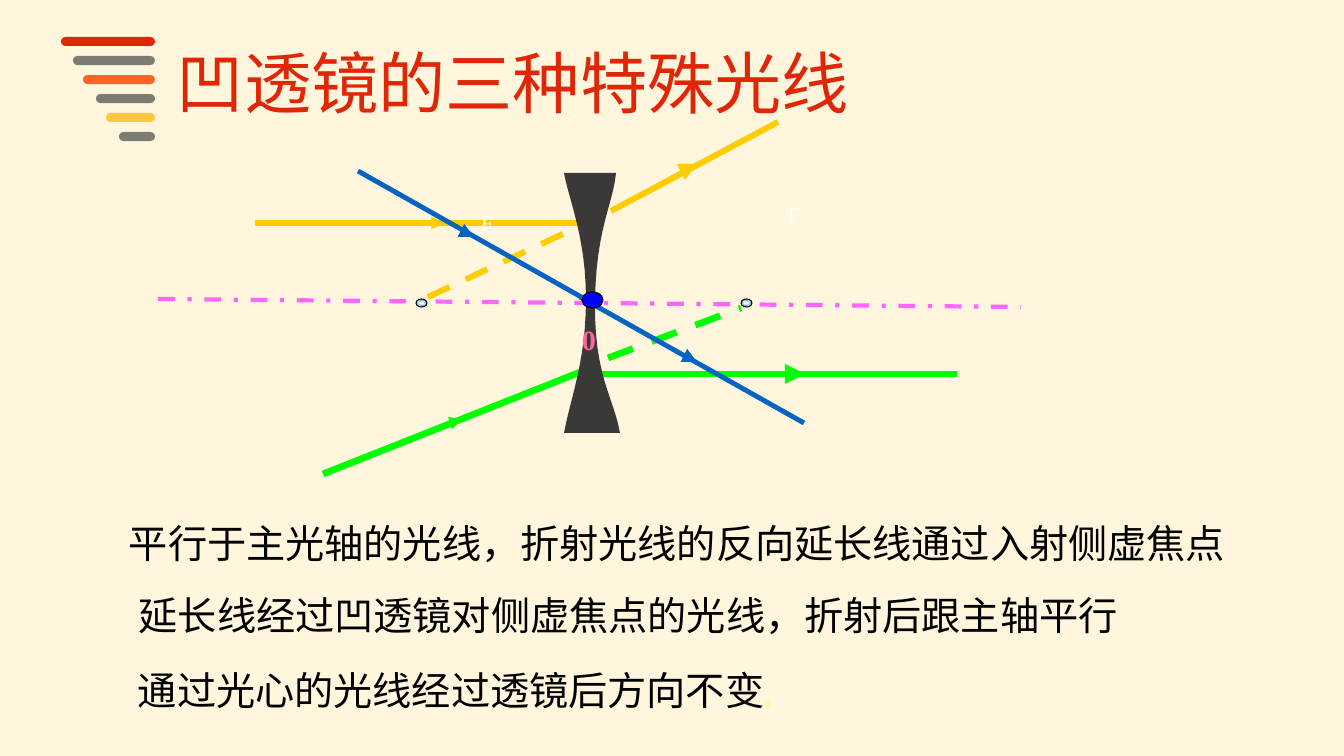
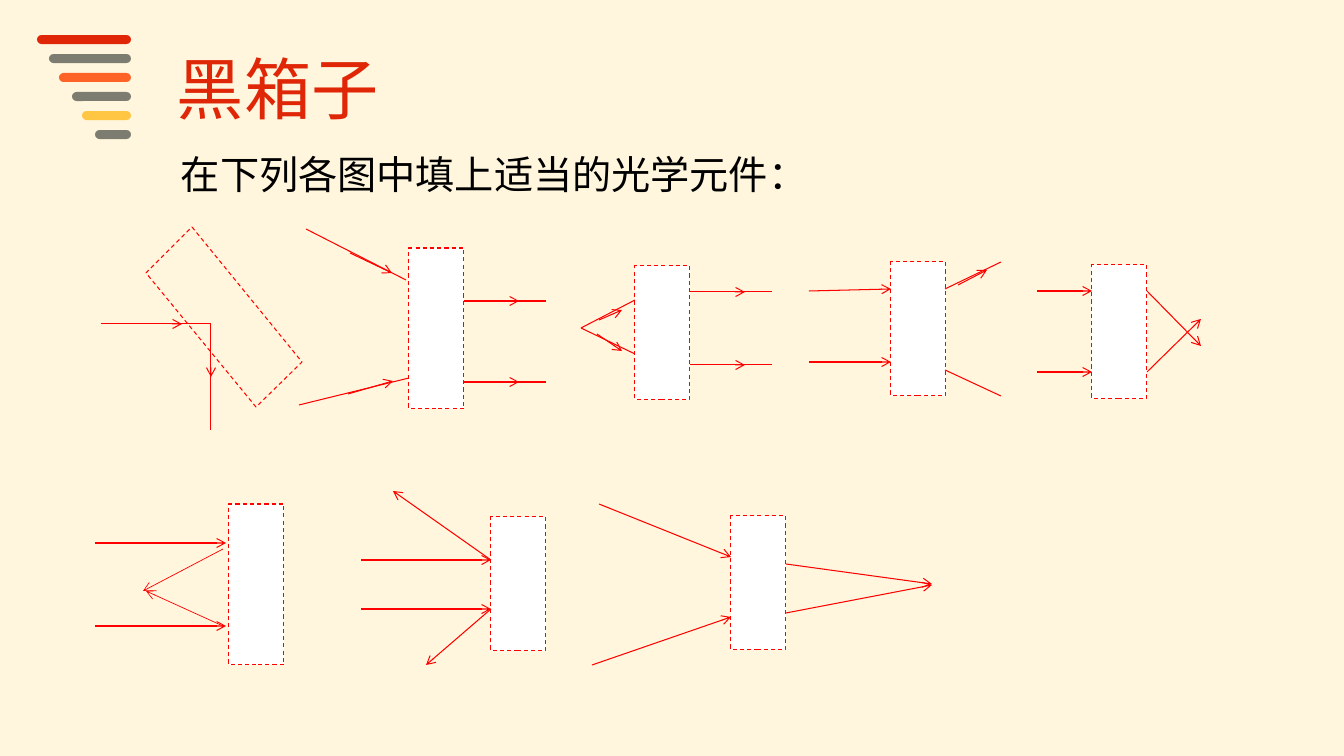
"""Two slides on lenses: the special rays of a concave lens, and black-box exercises."""
from lxml import etree
from pptx import Presentation
from pptx import util as u
from pptx.dml.color import RGBColor
from pptx.enum import dml, shapes
from pptx.oxml.ns import qn

PX = 9071
CJK, SERIF = "Noto Sans CJK SC", "Times New Roman"
CREAM, BLACK, WHITE, PALE = "FFF6DD", "000000", "FFFFFF", "FCFDFE"
CRIMSON, GREY, ORANGE, AMBER = "DF2708", "7C7C70", "FD6326", "FEC642"
RED, YELLOW, GREEN, BLUE = "FF0000", "FFCC00", "00FF00", "0563C1"
DASH, DASH_DOT = dml.MSO_LINE.DASH, dml.MSO_LINE.DASH_DOT
SHAPE = shapes.MSO_SHAPE
rgb = RGBColor.from_string


def add_line(s, ends, color, width, dash=None, head=None):
    """Draw a straight line, dashed or with an arrowhead at its end if asked."""
    cx = s.shapes.add_connector(shapes.MSO_CONNECTOR.STRAIGHT, *[v * PX for v in ends])
    cx.line.color.rgb = rgb(color)
    cx.line.width = u.Pt(width)
    if dash:
        cx.line.dash_style = dash
    if head:
        etree.SubElement(cx.line._get_or_add_ln(), qn("a:tailEnd"), type=head)
    etree.SubElement(cx._element.spPr, qn("a:effectLst"))


def add_text(s, box, runs):
    """Add a text box of one paragraph; runs are (text, size, font, colour, bold)."""
    tf = s.shapes.add_textbox(*[v * PX for v in box]).text_frame
    tf.word_wrap = True
    p = tf.paragraphs[0]
    for words, size, font, color, bold in runs:
        r = p.add_run()
        r.text = words
        r.font.size = u.Pt(size)
        r.font.bold = bold
        r.font.color.rgb = rgb(color)
        r.font.name = font
        etree.SubElement(r._r.get_or_add_rPr(), qn("a:ea"), typeface=CJK)


prs = Presentation()
prs.slide_width, prs.slide_height = 1344 * PX, 756 * PX
bg = prs.slide_master.background.fill
bg.solid()
bg.fore_color.rgb = rgb(CREAM)

bars = [(94, CRIMSON), (82, GREY), (72, ORANGE), (59, GREY), (49, AMBER), (36, GREY)]
slides = []
for title, box, right, top in [
    ("凹透镜的三种特殊光线", (167, 36, 723, 92), 155, 37),
    ("黑箱子", (167, 42, 298, 92), 131, 35),
]:
    s = prs.slides.add_slide(prs.slide_layouts[6])
    slides.append(s)
    for i, (w, color) in enumerate(bars):
        sp = s.shapes.add_shape(SHAPE.ROUNDED_RECTANGLE, (right - w) * PX,
                                (top + 19 * i) * PX, w * PX, 9 * PX)
        sp.adjustments[0] = 0.5
        sp.shadow.inherit = False
        sp.fill.solid()
        sp.fill.fore_color.rgb = rgb(color)
        sp.line.fill.background()
    add_text(s, box, [(title, 48, CJK, CRIMSON, False)])
lens_slide, box_slide = slides

s = lens_slide
for ends, color, width, dash, head in [
    ((255, 223, 583, 223), YELLOW, 4.25, None, None),
    ((394, 223, 444, 223), YELLOW, 3, None, "triangle"),
    ((323, 474, 593, 367), GREEN, 4.75, None, None),
    ((453, 422, 462, 419), GREEN, 3, None, "triangle"),
    ((608, 358, 741, 308), GREEN, 4.75, DASH, None),
    ((599, 374, 957, 374), GREEN, 4.75, None, None),
    ((751, 374, 805, 374), GREEN, 4.75, None, "triangle"),
    ((611, 211, 778, 122), YELLOW, 4.25, None, None),
    ((691, 167, 697, 164), YELLOW, 4.25, None, "triangle"),
    ((428, 297, 580, 226), YELLOW, 4.25, DASH, None),
    ((580, 297, 804, 423), BLUE, 3.5, None, None),
    ((687, 357, 697, 362), BLUE, 3.5, None, "triangle"),
    ((358, 171, 583, 298), BLUE, 3.5, None, None),
    ((466, 233, 474, 237), BLUE, 3.5, None, "triangle"),
]:
    add_line(s, ends, color, width, dash, head)

corner = (564, 173)
curves = [
    ((564, 173), (590, 173), (616, 173)),
    ((613, 205), (596, 228), (595, 302)),
    ((594, 376), (614, 398), (620, 433)),
    ((592, 433), (564, 433), (564, 433)),
    ((571, 396), (586, 361), (586, 299)),
    ((586, 238), (569, 200), (564, 173)),
]
points, start = [], corner
for a, b, end in curves:
    for t in [k / 12 for k in range(1, 13)]:
        weights = ((1 - t) ** 3, 3 * t * (1 - t) ** 2, 3 * t * t * (1 - t), t ** 3)
        points.append([round(PX * sum(w * q[axis] for w, q in zip(weights, (start, a, b, end))))
                       for axis in (0, 1)])
    start = end
fb = s.shapes.build_freeform(corner[0] * PX, corner[1] * PX, scale=1)
fb.add_line_segments(points, close=True)
lens = fb.convert_to_shape()
lens.shadow.inherit = False
lens.fill.solid()
lens.fill.fore_color.rgb = rgb("3B3838")
lens.line.fill.background()

add_line(s, (158, 299, 1021, 307), "FF66FF", 3, DASH_DOT)
for x, y, w, h, is_focus in [(416, 299, 11, 8, True), (741, 299, 11, 8, True),
                             (582, 292, 21, 16, False)]:
    sp = s.shapes.add_shape(SHAPE.OVAL, x * PX, y * PX, w * PX, h * PX)
    sp.shadow.inherit = False
    sp.line.color.rgb = rgb(BLACK)
    sp.line.width = u.Pt(0.75)
    if is_focus:
        sp.fill.gradient()
        for stop, color in zip(sp.fill.gradient_stops, (WHITE, "5B9BD5")):
            stop.color.rgb = rgb(color)
        grad = sp._element.spPr.find(qn("a:gradFill"))
        grad.remove(grad.find(qn("a:lin")))
        radial = etree.SubElement(grad, qn("a:path"), {"path": "shape"})
        etree.SubElement(radial, qn("a:fillToRect"), dict.fromkeys("ltrb", "50000"))
    else:
        sp.fill.solid()
        sp.fill.fore_color.rgb = rgb("0000FF")

for x, y in [(471, 204), (778, 196)]:
    add_text(s, (x, y, 40, 37), [("F", 16, SERIF, PALE, False)])
add_text(s, (572, 317, 64, 43), [("0", 20, SERIF, "FF6699", True)])
for box, words in [
    ((119, 514, 1160, 57), "平行于主光轴的光线，折射光线的反向延长线通过入射侧虚焦点"),
    ((129, 586, 1011, 57), "延长线经过凹透镜对侧虚焦点的光线，折射后跟主轴平行"),
]:
    add_text(s, box, [(words, 28, CJK, BLACK, False)])
add_text(s, (128, 661, 682, 58), [("通过光心的光线经过透镜后方向不变", 28, CJK, BLACK, False),
                                  ("。", 12, CJK, "FFFF66", True)])

s = box_slide
add_text(s, (171, 145, 722, 58), [("在下列各图中填上适当的光学元件：", 28, SERIF, BLACK, False)])

fb = s.shapes.build_freeform(192, 227, scale=PX)
fb.add_line_segments([(302, 362), (256, 407), (146, 273)], close=True)
tilted = fb.convert_to_shape()
tilted.fill.background()
boxes = [tilted]
for x, y, h in [(409, 248, 161), (635, 266, 134), (891, 262, 134), (1092, 265, 134),
                (229, 504, 161), (491, 517, 134), (731, 516, 134)]:
    sp = s.shapes.add_shape(SHAPE.RECTANGLE, x * PX, y * PX, 55 * PX, h * PX)
    sp.fill.solid()
    sp.fill.fore_color.rgb = rgb(WHITE)
    boxes.append(sp)
for sp in boxes:
    sp.shadow.inherit = False
    sp.line.color.rgb = rgb(RED)
    sp.line.width = u.Pt(0.75)
    sp.line.dash_style = DASH

plain_rays = [
    (101, 324, 211, 324), (211, 324, 211, 430),
    (299, 405, 409, 378), (306, 229, 406, 280),
    (581, 328, 635, 300), (581, 328, 635, 354),
    (945, 289, 1001, 262), (945, 370, 1001, 396),
]
arrow_rays = [
    (211, 324, 211, 377), (128, 324, 182, 324),
    (348, 394, 393, 381), (350, 253, 392, 273),
    (599, 320, 622, 310), (597, 334, 622, 351),
    (809, 291, 891, 289), (809, 362, 891, 362), (958, 285, 987, 270),
    (1037, 291, 1092, 291), (1037, 372, 1092, 372),
    (1147, 291, 1201, 346), (1147, 372, 1201, 319),
    (95, 543, 226, 543), (95, 626, 226, 626),
    (361, 560, 491, 560), (361, 609, 491, 609),
    (491, 560, 393, 491), (491, 609, 426, 665),
    (599, 504, 731, 557), (592, 665, 731, 617),
    (786, 564, 932, 584), (786, 613, 932, 585),
]
thin_rays = [(223, 549, 143, 591), (223, 626, 146, 591)]
for x, y in [(464, 301), (464, 382), (690, 292), (690, 365)]:
    plain_rays.append((x, y, x + 82, y))
    arrow_rays.append((x + 27, y, x + 55, y))
for rays, width, head in [(plain_rays, 0.75, None), (arrow_rays, 0.75, "arrow"),
                          (thin_rays, 0.5, "arrow")]:
    for ends in rays:
        add_line(s, ends, RED, width, head=head)

prs.save("out.pptx")
